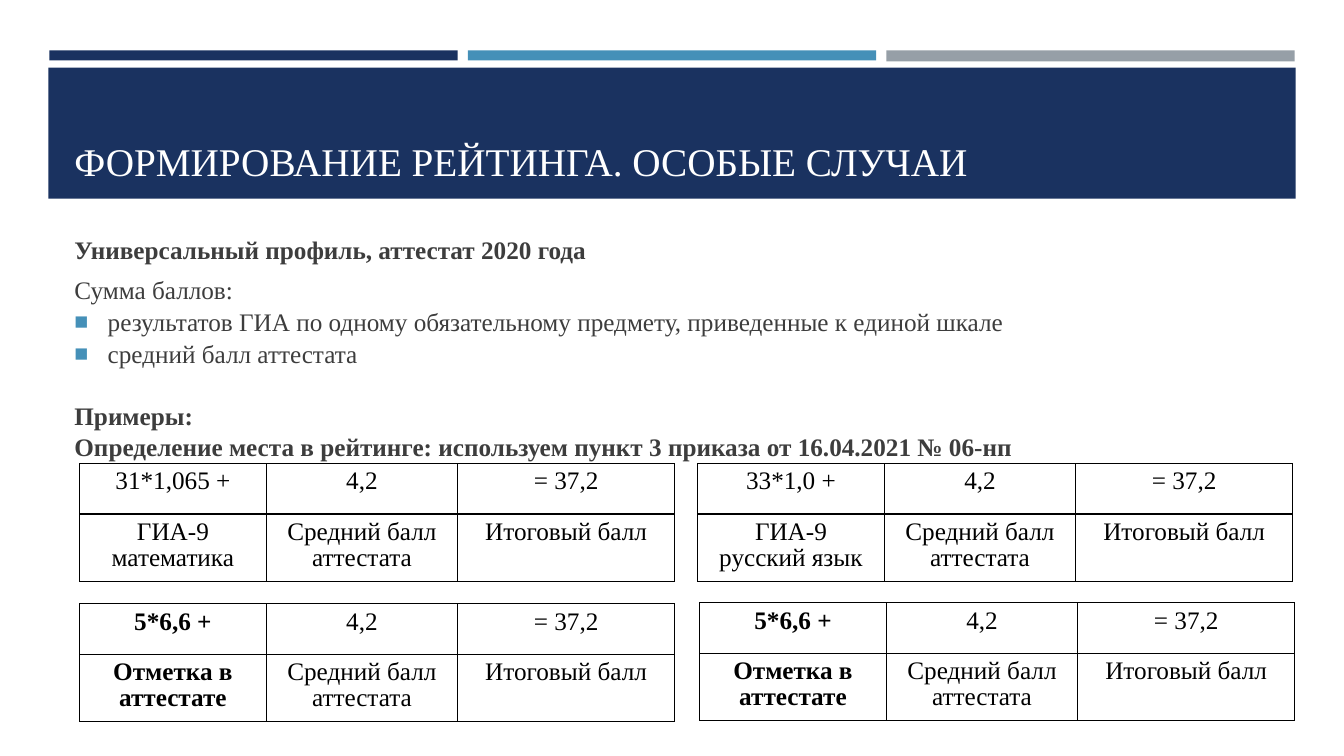
from lxml import etree
from pptx import Presentation
from pptx.dml.color import RGBColor
from pptx.enum.shapes import MSO_SHAPE
from pptx.enum.text import MSO_ANCHOR, PP_ALIGN
from pptx.oxml.ns import qn
from pptx.util import Inches, Pt

RECTANGLE = MSO_SHAPE.RECTANGLE
TOP, BOTTOM = MSO_ANCHOR.TOP, MSO_ANCHOR.BOTTOM
LEFT, CENTER = PP_ALIGN.LEFT, PP_ALIGN.CENTER

FONT = "Times New Roman"
COLORS = {
    "navy": "1A3260", "blue": "4590B8", "gray": "969FA7",
    "white": "FFFFFF", "text": "3D3D3D", "black": "000000",
}
# color, left, top, width, height
BARS = [
    ("navy", 0.49, 0.5, 4.05, 0.1),
    ("blue", 4.64, 0.5, 4.05, 0.1),
    ("gray", 8.79, 0.5, 4.05, 0.11),
    ("navy", 0.48, 0.67, 12.37, 1.3),
]
TITLE = "ФОРМИРОВАНИЕ РЕЙТИНГА. ОСОБЫЕ СЛУЧАИ"
# text, bold, bulleted, points before, points after
BODY = [
    ("Универсальный профиль, аттестат 2020 года", True, False, 0, 6),
    ("Сумма баллов:", False, False, 0, 0),
    ("результатов ГИА по одному обязательному предмету, приведенные к единой шкале",
     False, True, 0, 0),
    ("средний балл аттестата", False, True, 0, 0),
    ("Примеры:", True, False, 21.6, 0),
    ("Определение места в рейтинге: используем пункт 3 приказа от 16.04.2021 № 06-нп",
     True, False, 0, 0),
]
# left, top, score, score label, bold first column
EXAMPLES = [
    (0.79, 4.6, "31*1,065 +", "ГИА-9 математика", False),
    (6.92, 4.6, "33*1,0 +", "ГИА-9\nрусский язык", False),
    (0.79, 5.99, "5*6,6 +", "Отметка в аттестате", True),
    (6.94, 5.98, "5*6,6 +", "Отметка в аттестате", True),
]
SHARED_COLUMNS = [("4,2", "= 37,2"), ("Средний балл аттестата", "Итоговый балл")]
COLUMN_WIDTHS = [1.85, 1.9, 2.15]
ROW_HEIGHTS = [0.5, 0.65]


def rgb(name):
    return RGBColor.from_string(COLORS[name])


def format_paragraph(paragraph, color, size, bold=False, **settings):
    for name, value in settings.items():
        setattr(paragraph, name, value)
    for name, value in {"name": FONT, "size": Pt(size), "bold": bold}.items():
        setattr(paragraph.font, name, value)
    paragraph.font.color.rgb = rgb(color)


def add_bar(slide, color, *box):
    shape = slide.shapes.add_shape(RECTANGLE, *map(Inches, box))
    shape.shadow.inherit = False
    shape.fill.solid()
    shape.fill.fore_color.rgb = rgb(color)
    shape.line.fill.background()


def add_text_frame(slide, box, anchor):
    frame = slide.shapes.add_textbox(*map(Inches, box)).text_frame
    frame.word_wrap = True
    frame.vertical_anchor = anchor
    return frame


def add_bullet(paragraph):
    properties = paragraph._p.get_or_add_pPr()
    properties.set("marL", str(Inches(0.33)))
    properties.set("indent", str(-Inches(0.33)))
    color = etree.SubElement(properties, qn("a:buClr"))
    etree.SubElement(color, qn("a:srgbClr"), val=COLORS["blue"])
    etree.SubElement(properties, qn("a:buSzPct"), val="92000")
    etree.SubElement(properties, qn("a:buFont"), typeface="Arial")
    etree.SubElement(properties, qn("a:buChar"), char="■")


def add_borders(cell):
    properties = cell._tc.get_or_add_tcPr()
    for position, side in enumerate(("a:lnL", "a:lnR", "a:lnT", "a:lnB")):
        line = etree.Element(qn(side), w=str(Pt(1)))
        fill = etree.SubElement(line, qn("a:solidFill"))
        etree.SubElement(fill, qn("a:srgbClr"), val=COLORS["black"])
        properties.insert(position, line)


def add_example(slide, left, top, score, label, bold):
    rows = [(first, *rest) for first, rest in zip((score, label), SHARED_COLUMNS)]
    size = sum(COLUMN_WIDTHS), sum(ROW_HEIGHTS)
    table = slide.shapes.add_table(
        len(rows), len(COLUMN_WIDTHS), *map(Inches, (left, top, *size))).table
    table.first_row = table.horz_banding = False
    for column, width in zip(table.columns, COLUMN_WIDTHS):
        column.width = Inches(width)
    for row, height, texts in zip(table.rows, ROW_HEIGHTS, rows):
        row.height = Inches(height)
        for index, (cell, text) in enumerate(zip(row.cells, texts)):
            cell.text = text
            cell.vertical_anchor = TOP
            cell.fill.background()
            add_borders(cell)
            for paragraph in cell.text_frame.paragraphs:
                format_paragraph(paragraph, "black", 18, bold and index == 0,
                                 alignment=CENTER, line_spacing=0.95)


def main():
    presentation = Presentation()
    presentation.slide_width = Inches(13.33)
    presentation.slide_height = Inches(7.5)
    slide = presentation.slides.add_slide(presentation.slide_layouts[6])

    for bar in BARS:
        add_bar(slide, *bar)

    title = add_text_frame(slide, (0.64, 0.77, 12.06, 1.11), BOTTOM)
    title.text = TITLE
    format_paragraph(title.paragraphs[0], "white", 28, alignment=LEFT)

    body = add_text_frame(slide, (0.64, 2.28, 12.36, 2.51), TOP)
    body.margin_top = Inches(0.03)
    body.text = "\n".join(text for text, *_ in BODY)
    for paragraph, (_, bold, bulleted, before, after) in zip(body.paragraphs, BODY):
        format_paragraph(paragraph, "text", 18, bold, alignment=LEFT, line_spacing=1.05,
                         space_before=Pt(before), space_after=Pt(after))
        if bulleted:
            add_bullet(paragraph)

    for example in EXAMPLES:
        add_example(slide, *example)

    presentation.save("out.pptx")


if __name__ == "__main__":
    main()
